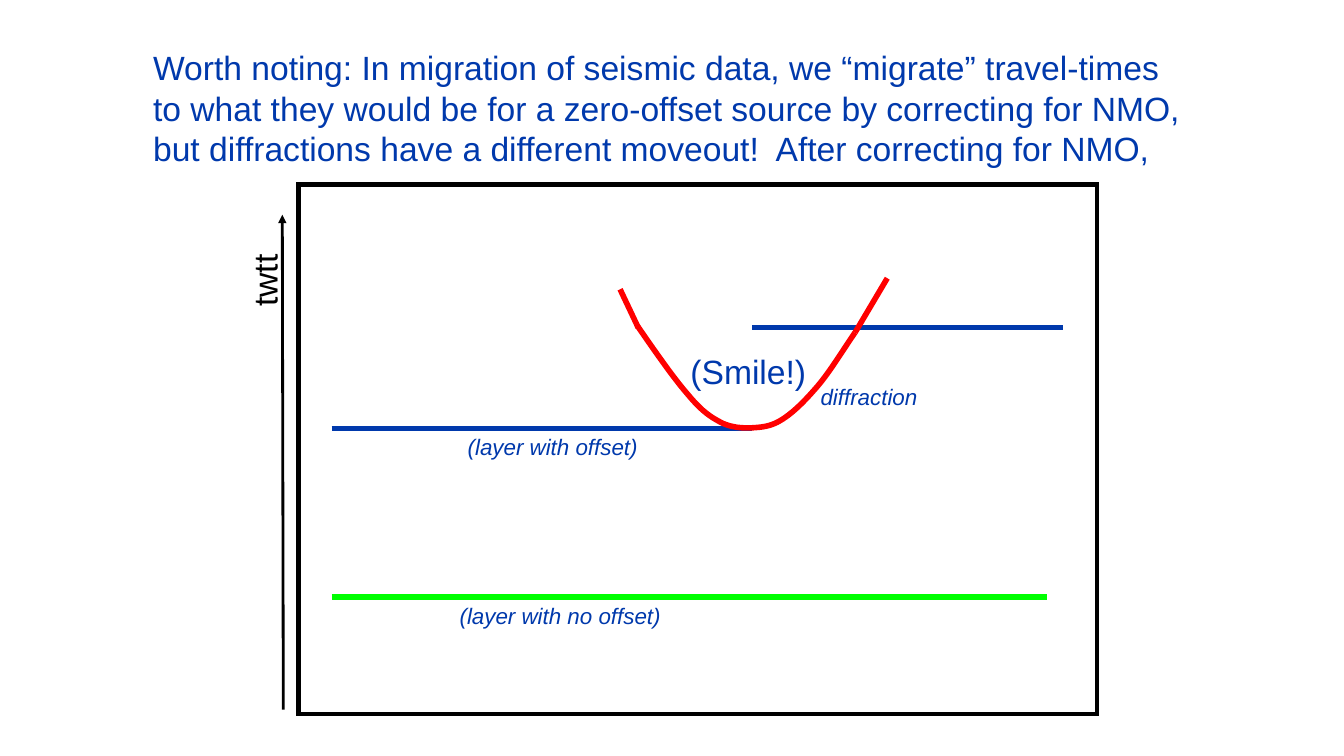
from lxml import etree
from pptx import Presentation
from pptx.dml.color import RGBColor
from pptx.enum.shapes import MSO_CONNECTOR, MSO_SHAPE
from pptx.enum.text import MSO_AUTO_SIZE
from pptx.oxml.ns import qn
from pptx.util import Inches, Pt

STRAIGHT = MSO_CONNECTOR.STRAIGHT
RECTANGLE = MSO_SHAPE.RECTANGLE
FIT_SHAPE = MSO_AUTO_SIZE.SHAPE_TO_FIT_TEXT

BLUE = RGBColor(0x00, 0x39, 0xAC)
GREEN = RGBColor(0x00, 0xFF, 0x02)
RED = RGBColor(0xFF, 0x00, 0x00)
BLACK = RGBColor(0x00, 0x00, 0x00)

INTRO = (
    "Worth noting: In migration of seismic data, we “migrate” travel-times\n"
    "to what they would be for a zero-offset source by correcting for NMO,\n"
    "but diffractions have a different moveout!  After correcting for NMO,"
)

# Start point, then two control points and an end point per Bézier piece
DIFFRACTION_START = (6.32, 3.23)
DIFFRACTION_PIECES = [
    ((6.5, 3.49), (6.68, 3.75), (6.82, 3.91)),
    ((6.96, 4.08), (7.05, 4.14), (7.17, 4.2)),
    ((7.28, 4.25), (7.41, 4.25), (7.52, 4.24)),
    ((7.62, 4.23), (7.69, 4.21), (7.79, 4.14)),
    ((7.89, 4.07), (7.99, 3.97), (8.11, 3.83)),
    ((8.23, 3.69), (8.35, 3.49), (8.48, 3.3)),
]


def bezier_points(start, pieces, steps=10):
    """Return points along a chain of cubic Bézier pieces, without the start."""
    points = []
    for c1, c2, end in pieces:
        for step in range(1, steps + 1):
            t = step / steps
            weights = ((1 - t) ** 3, 3 * t * (1 - t) ** 2, 3 * t**2 * (1 - t), t**3)
            points.append(tuple(
                sum(w * p[axis] for w, p in zip(weights, (start, c1, c2, end)))
                for axis in (0, 1)
            ))
        start = end
    return points


class SeismicSlide:
    font = "Arial"

    def __init__(self, slide):
        self.shapes = slide.shapes

    def stroke(self, line, color, width):
        line.color.rgb = color
        line.width = Pt(width)

    def frame(self, left, top, width, height):
        box = self.shapes.add_shape(
            RECTANGLE, Inches(left), Inches(top), Inches(width), Inches(height))
        box.shadow.inherit = False
        box.fill.background()
        self.stroke(box.line, BLACK, 3)
        outline = box._element.spPr.find(qn("a:ln"))
        etree.SubElement(outline, qn("a:miter"), lim="800000")

    def line(self, start, end, color, width=4, arrow=False):
        connector = self.shapes.add_connector(
            STRAIGHT, *(Inches(value) for value in start + end))
        self.stroke(connector.line, color, width)
        properties = connector._element.spPr
        if arrow:
            etree.SubElement(properties.find(qn("a:ln")), qn("a:tailEnd"), type="triangle")
        etree.SubElement(properties, qn("a:effectLst"))

    def curve(self, start, pieces, color):
        builder = self.shapes.build_freeform(Inches(start[0]), Inches(start[1]))
        builder.add_line_segments(
            [(Inches(x), Inches(y)) for x, y in bezier_points(start, pieces)],
            close=False)
        curve = builder.convert_to_shape()
        curve.shadow.inherit = False
        curve.fill.background()
        self.stroke(curve.line, color, 4)

    def text(self, content, left, top, width, height, size=24, color=BLUE,
             italic=False, rotation=0):
        box = self.shapes.add_textbox(
            Inches(left), Inches(top), Inches(width), Inches(height))
        box.rotation = rotation
        frame = box.text_frame
        frame.word_wrap = False
        frame.auto_size = FIT_SHAPE
        frame.text = content
        for paragraph in frame.paragraphs:
            for run in paragraph.runs:
                run.font.name = self.font
                run.font.size = Pt(size)
                run.font.italic = italic
                run.font.color.rgb = color

    def label(self, content, left, top, width):
        self.text(content, left, top, width, 0.37, size=16, italic=True)


def main():
    prs = Presentation()
    prs.slide_width = Inches(13.33)
    prs.slide_height = Inches(7.5)
    section = SeismicSlide(prs.slides.add_slide(prs.slide_layouts[6]))

    section.text(INTRO, 1.42, 0.42, 10.48, 1.31)
    section.frame(2.96, 1.83, 7.92, 5.25)

    section.line((3.29, 5.92), (10.38, 5.92), GREEN)
    section.line((3.29, 4.25), (7.46, 4.25), BLUE)
    section.line((7.46, 3.25), (10.54, 3.25), BLUE)

    section.curve(DIFFRACTION_START, DIFFRACTION_PIECES, RED)
    section.label("(layer with no offset)", 4.46, 5.92, 2.22)
    section.label("(layer with offset)", 4.54, 4.25, 1.91)
    section.line((8.48, 3.3), (8.8, 2.76), RED)
    section.line((6.33, 3.25), (6.15, 2.87), RED)
    section.label("diffraction", 8.04, 3.75, 1.16)

    section.line((2.81, 7.04), (2.8, 2.13), BLACK, width=2, arrow=True)
    section.text("twtt", 2.26, 2.53, 0.72, 0.5, color=BLACK, rotation=270)
    section.text("(Smile!)", 6.75, 3.43, 1.36, 0.5)

    prs.save("out.pptx")


if __name__ == "__main__":
    main()
